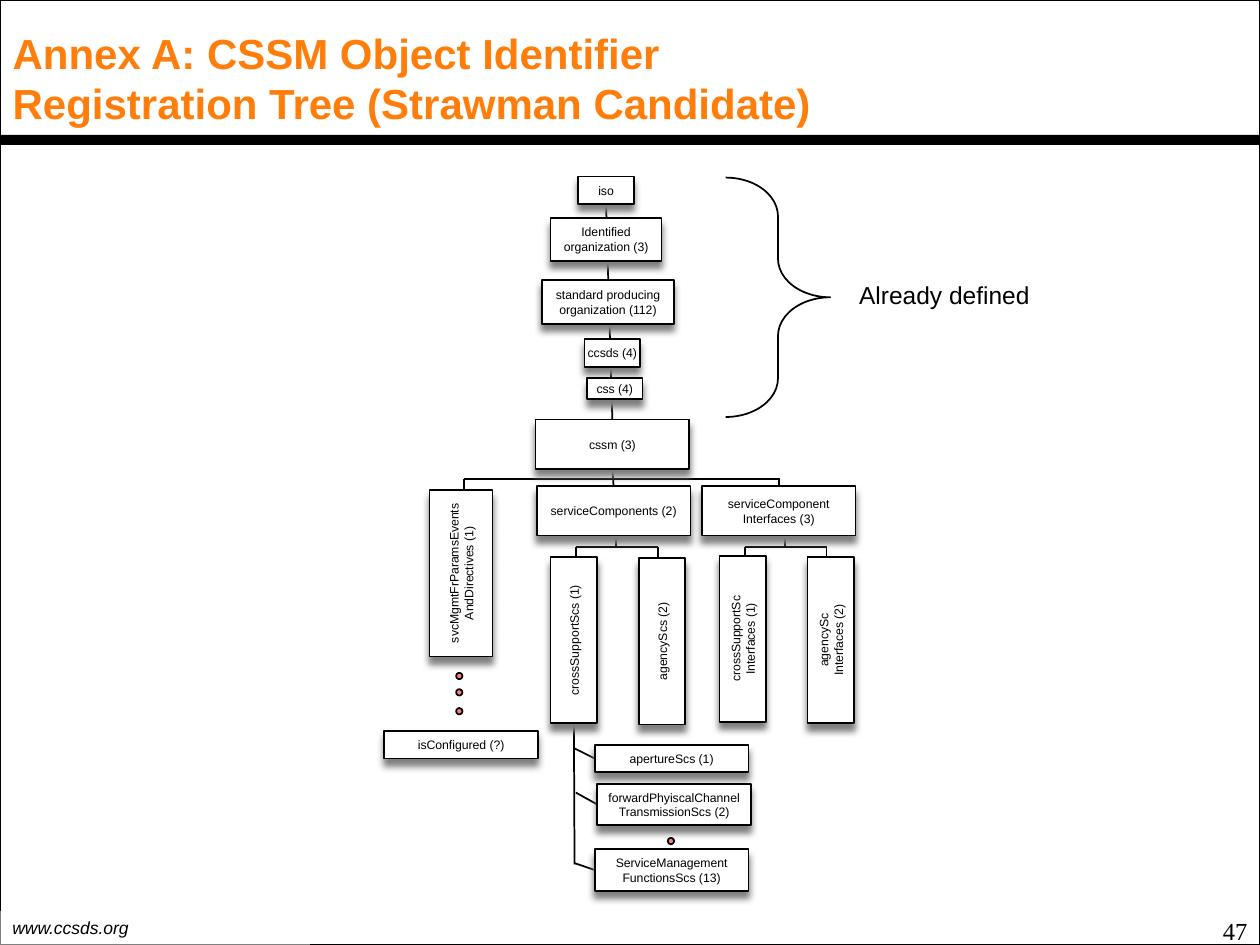
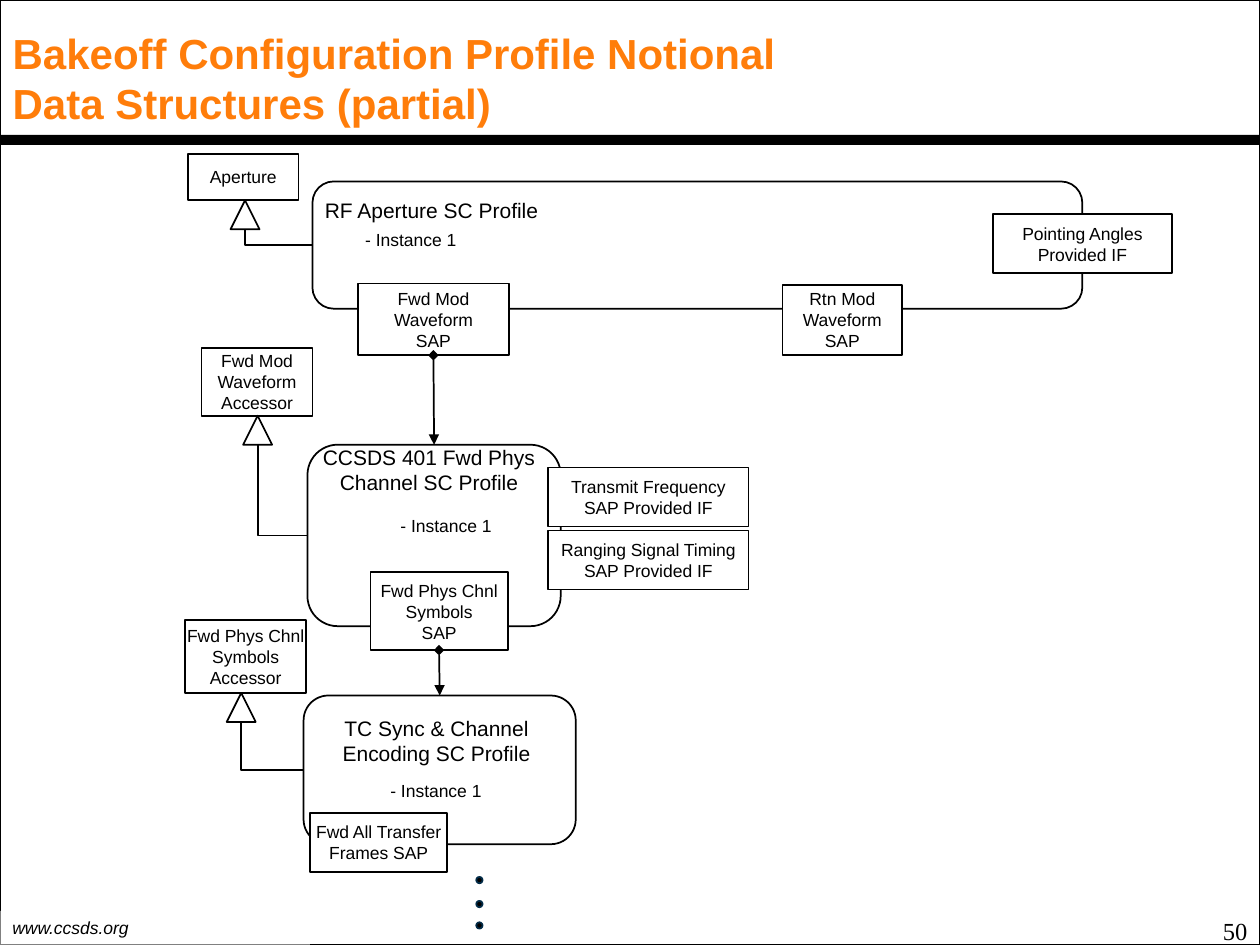
"""Build two slides: an object identifier tree and a configuration profile diagram."""
from lxml import etree
from pptx import Presentation
from pptx.dml.color import RGBColor
from pptx.enum.shapes import MSO_CONNECTOR as LINK, MSO_SHAPE as SHAPE
from pptx.enum.text import MSO_ANCHOR as ANCHOR, MSO_AUTO_SIZE as AUTO, PP_ALIGN as ALIGN
from pptx.oxml.ns import qn
from pptx.util import Pt

PX = 9144
BLACK, WHITE, ORANGE, RED = "000000", "FFFFFF", "FF7D0A", "FF0000"
GREY, NAVY = "808080", "022B47"


def paint(item, fill=None, line=BLACK, alpha=None, shadow=False):
    properties = item._element.spPr
    if fill:
        item.fill.solid()
        item.fill.fore_color.rgb = RGBColor.from_string(fill)
        if alpha:
            color = properties.find(qn("a:solidFill")).find(qn("a:srgbClr"))
            etree.SubElement(color, qn("a:alpha"), val=str(alpha * 1000))
    elif hasattr(item, "fill"):
        item.fill.background()
    if line:
        item.line.color.rgb = RGBColor.from_string(line)
        item.line.width = Pt(1)
    else:
        item.line.fill.background()
    effects = etree.SubElement(properties, qn("a:effectLst"))
    if shadow:
        outer = etree.SubElement(effects, qn("a:outerShdw"), blurRad="50800",
                                 dist="50800", dir="5400000", rotWithShape="0")
        etree.SubElement(outer, qn("a:srgbClr"), val=GREY)
    return item


def write(box, text, size=10, font="Arial", color=BLACK, bold=False, italic=False,
          align=ALIGN.CENTER, anchor=ANCHOR.MIDDLE, wrap=False, upright=False):
    frame = box.text_frame
    frame.word_wrap = wrap
    frame.auto_size = AUTO.NONE
    frame.vertical_anchor = anchor
    if upright:
        frame._txBody.bodyPr.set("vert", "vert270")
    for index, words in enumerate(text.split("\n")):
        para = frame.add_paragraph() if index else frame.paragraphs[0]
        para.alignment = align
        span = para.add_run()
        span.text = words
        span.font.size = Pt(size)
        span.font.name = font
        span.font.bold = bold
        span.font.italic = italic
        span.font.color.rgb = RGBColor.from_string(color)
    return box


deck = Presentation()
deck.slide_width, deck.slide_height = 1000 * PX, 750 * PX

pages = []
for heading, number in (
    ("Annex A: CSSM Object Identifier Registration Tree (Strawman Candidate)", "47"),
    ("Bakeoff Configuration Profile Notional Data Structures (partial)", "50"),
):
    page = deck.slides.add_slide(deck.slide_layouts[5])
    title = page.shapes.title
    title.left, title.top, title.width, title.height = 0, 28 * PX, 681 * PX, 67 * PX
    write(title, heading, size=24, color=ORANGE, bold=True, align=ALIGN.LEFT, wrap=True)
    for at, look in (
        ((0, 0, 1000, 750), {}),
        ((0, 723, 246, 27), dict(fill=WHITE, line=None, alpha=50)),
        ((0, 107, 1000, 8), dict(fill=BLACK, line=None)),
    ):
        band = page.shapes.add_shape(SHAPE.RECTANGLE, *(v * PX for v in at))
        paint(band, **look)
        if at[1] == 723:
            write(band, "www.ccsds.org", italic=True, align=ALIGN.LEFT, wrap=True)
    corner = page.shapes.add_textbox(767 * PX, 722 * PX, 233 * PX, 47 * PX)
    write(corner, number, size=14, font="Times New Roman", align=ALIGN.RIGHT,
          anchor=ANCHOR.TOP, wrap=True)
    pages.append(page)
tree, profile = (page.shapes for page in pages)

branches = [
    ((481, 162, 486, 333), "iso", "cssm (3)"),
    ((486, 372, 487, 386), "cssm (3)", "serviceComponents (2)"),
    ((368, 380, 619, 380), None, None),
    ((368, 380, 368, 388), None, None),
    ((618, 380, 618, 386), None, "serviceComponent\nInterfaces (3)"),
    ((455, 574, 456, 686), "crossSupportScs (1)", None),
    ((456, 594, 472, 602), None, "apertureScs (1)"),
    ((457, 629, 474, 638), None, "forwardPhyiscalChannel\nTransmissionScs (2)"),
    ((456, 685, 472, 691), None, "ServiceManagement\nFunctionsScs (13)"),
]
for left, stem, right in ((457, 489, 522), (591, 623, 656)):
    branches += [
        ((stem, 426, stem, 434), None, None),
        ((left, 434, right, 434), None, None),
        ((left, 434, left, 442), None, None),
        ((right, 434, right, 442), None, None),
    ]
links = []
for ends, start, finish in branches:
    branch = tree.add_connector(LINK.STRAIGHT, *(v * PX for v in ends))
    links.append((paint(branch), start, finish))

nodes = {}
for at, label in (
    ((459, 140, 44, 22), "iso"),
    ((437, 173, 88, 34), "Identified\norganization (3)"),
    ((430, 222, 105, 35), "standard producing\norganization (112)"),
    ((464, 269, 44, 22), "ccsds (4)"),
    ((466, 300, 44, 17), "css (4)"),
    ((425, 333, 122, 39), "cssm (3)"),
    ((341, 389, 50, 132), "svcMgmtFrParamsEvents\nAndDirectives (1)"),
    ((426, 386, 122, 39), "serviceComponents (2)"),
    ((557, 386, 122, 39), "serviceComponent\nInterfaces (3)"),
    ((437, 442, 37, 132), "crossSupportScs (1)"),
    ((507, 443, 37, 132), "agencyScs (2)"),
    ((571, 441, 37, 132), "crossSupportSc\nInterfaces (1)"),
    ((641, 442, 37, 132), "agencySc\nInterfaces (2)"),
    ((305, 580, 122, 22), "isConfigured (?)"),
    ((472, 591, 122, 22), "apertureScs (1)"),
    ((474, 622, 122, 33), "forwardPhyiscalChannel\nTransmissionScs (2)"),
    ((472, 674, 122, 33), "ServiceManagement\nFunctionsScs (13)"),
):
    node = tree.add_shape(SHAPE.RECTANGLE, *(v * PX for v in at))
    paint(node, fill=WHITE, shadow=True)
    nodes[label] = write(node, label, size=7, upright=at[3] > at[2])

for branch, start, finish in links:
    if start:
        branch.begin_connect(nodes[start], 2)
    if finish:
        branch.end_connect(nodes[finish], 1 if finish.endswith("Scs (1)") or "Scs (" in finish else 0)

for x, y in ((362, 534), (362, 547), (362, 562), (530, 665)):
    dot = tree.add_shape(SHAPE.OVAL, x * PX, y * PX, 5 * PX, 5 * PX)
    paint(dot, fill=RED, alpha=50)

brace = tree.add_shape(SHAPE.RIGHT_BRACE, 576 * PX, 141 * PX, 83 * PX, 190 * PX)
brace.adjustments[0], brace.adjustments[1] = 0.37, 0.5
paint(brace)
note = tree.add_textbox(672 * PX, 217 * PX, 156 * PX, 34 * PX)
write(note, "Already defined", size=14, align=ALIGN.LEFT, anchor=ANCHOR.TOP)

frames = []
for at in ((248, 144, 611, 101), (244, 353, 201, 144), (241, 552, 216, 118)):
    frame = profile.add_shape(SHAPE.ROUNDED_RECTANGLE, *(v * PX for v in at))
    frames.append(paint(frame))

for at, label, size, align in (
    ((248, 152, 191, 30), "RF Aperture SC Profile", 12, ALIGN.LEFT),
    ((238, 348, 205, 50), "CCSDS 401 Fwd Phys\nChannel SC Profile", 12, ALIGN.CENTER),
    ((254, 563, 185, 50), "TC Sync & Channel\nEncoding SC Profile", 12, ALIGN.CENTER),
    ((280, 177, 93, 27), "- Instance 1", 10, ALIGN.LEFT),
    ((308, 404, 93, 27), "- Instance 1", 10, ALIGN.LEFT),
    ((300, 614, 93, 27), "- Instance 1", 10, ALIGN.LEFT),
):
    caption = profile.add_textbox(*(v * PX for v in at))
    write(caption, label, size=size, align=align, anchor=ANCHOR.TOP)

ports = {}
for at, label in (
    ((149, 122, 88, 37), "Aperture"),
    ((160, 276, 88, 54), "Fwd Mod\nWaveform\nAccessor"),
    ((147, 492, 96, 58), "Fwd Phys Chnl\nSymbols\nAccessor"),
    ((284, 225, 120, 57), "Fwd Mod\nWaveform\nSAP"),
    ((621, 226, 95, 56), "Rtn Mod\nWaveform\nSAP"),
    ((294, 454, 109, 62), "Fwd Phys Chnl\nSymbols\nSAP"),
    ((246, 645, 109, 47), "Fwd All Transfer\nFrames SAP"),
    ((788, 170, 142, 47), "Pointing Angles\nProvided IF"),
    ((435, 371, 159, 47), "Transmit Frequency\nSAP Provided IF"),
    ((435, 421, 159, 47), "Ranging Signal Timing\nSAP Provided IF"),
):
    port = profile.add_shape(SHAPE.RECTANGLE, *(v * PX for v in at))
    paint(port, fill=WHITE)
    ports[label] = write(port, label)

for frame, (x, y) in zip(frames, ((183, 159), (193, 330), (180, 550))):
    triangle = profile.add_shape(SHAPE.ISOSCELES_TRIANGLE, x * PX, y * PX, 23 * PX, 23 * PX)
    paint(triangle, fill=WHITE, alpha=50)
    elbow = profile.add_connector(LINK.ELBOW, 0, 0, 0, 0)
    elbow.begin_connect(frame, 1)
    elbow.end_connect(triangle, 3)
    elbow.end_x = triangle.left + triangle.width // 2
    elbow.end_y = triangle.top + triangle.height
    elbow._element.spPr.find(qn("a:prstGeom")).set("prst", "bentConnector2")
    paint(elbow)

for label, frame in (("Fwd Mod\nWaveform\nSAP", frames[1]),
                     ("Fwd Phys Chnl\nSymbols\nSAP", frames[2])):
    arrow = profile.add_connector(LINK.STRAIGHT, 0, 0, 0, 0)
    arrow.begin_connect(ports[label], 2)
    arrow.end_connect(frame, 0)
    paint(arrow)
    outline = arrow.line._get_or_add_ln()
    etree.SubElement(outline, qn("a:headEnd"), type="diamond")
    etree.SubElement(outline, qn("a:tailEnd"), type="triangle")

for y in (696, 715, 732):
    dot = profile.add_shape(SHAPE.OVAL, 378 * PX, y * PX, 5 * PX, 5 * PX)
    paint(dot, fill=BLACK, line=NAVY)

deck.save("out.pptx")
